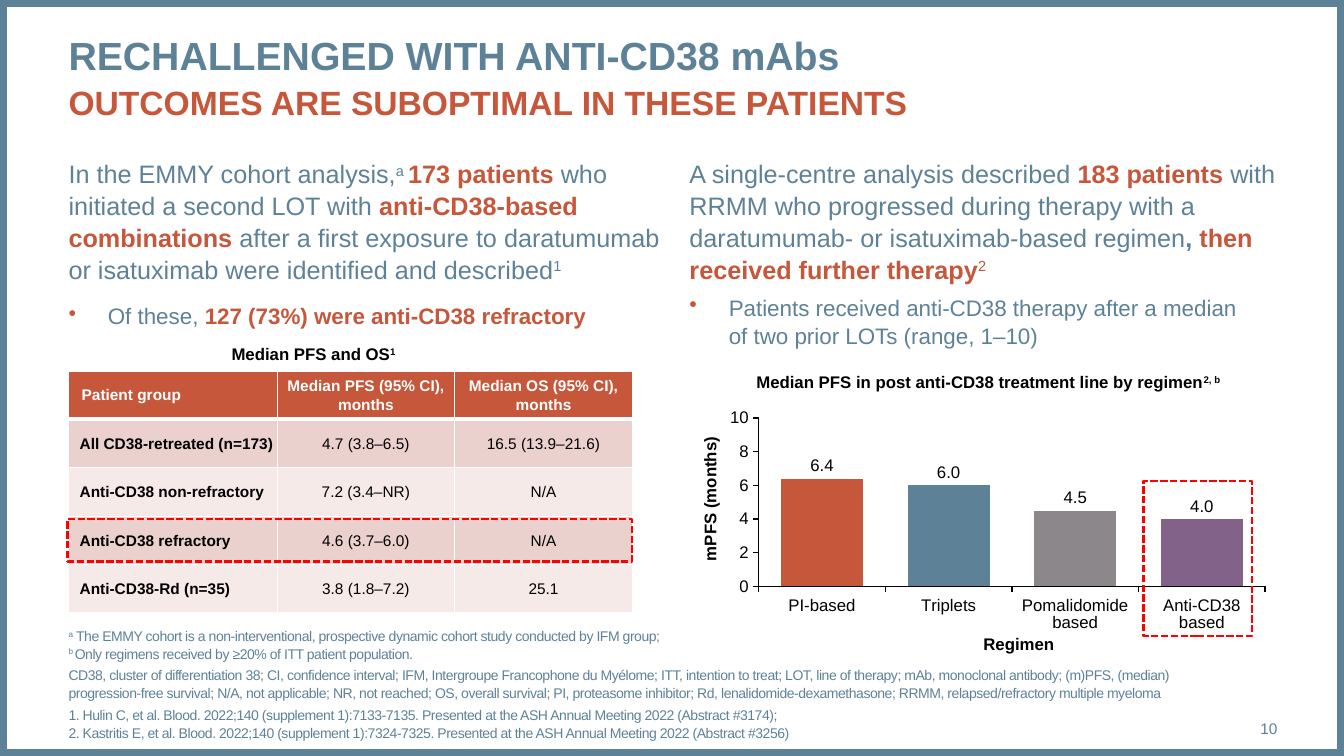
from lxml import etree
from pptx import Presentation
from pptx import util as u
from pptx.chart import data as chart_data
from pptx.dml import color
from pptx.enum import chart as charts, dml, shapes, text
from pptx.oxml import ns, parse_xml

BLUE, ORANGE, BLACK, WHITE, RED = "5D8298", "C6573B", "000000", "FFFFFF", "FF0000"
LEFT, RIGHT, CENTER = text.PP_ALIGN.LEFT, text.PP_ALIGN.RIGHT, text.PP_ALIGN.CENTER
TOP, MIDDLE, BOTTOM = text.MSO_ANCHOR.TOP, text.MSO_ANCHOR.MIDDLE, text.MSO_ANCHOR.BOTTOM


def rgb(value):
    return color.RGBColor.from_string(value)


class Slide:
    """Draws styled elements, placed in hundredths of the slide's width and height."""

    font = "Arial"

    def __init__(self, deck):
        self.deck = deck
        self.page = deck.slides.add_slide(deck.slide_layouts[6])

    def place(self, left, top, width, height):
        column, row = self.deck.slide_width / 100, self.deck.slide_height / 100
        return [round(n) for n in (left * column, top * row, width * column, height * row)]

    def style(self, font, size, tone, bold=False):
        font.name, font.size, font.bold = self.font, u.Pt(size), bold
        font.color.rgb = rgb(tone)

    def spans(self, para, spans, size, tone, spacing=0):
        for words, marks in spans:
            for number, line in enumerate(words.split("\n")):
                if number:
                    para.add_line_break()
                if not line:
                    continue
                span = para.add_run()
                span.text = line
                self.style(span.font, size, ORANGE if "o" in marks else tone, "b" in marks)
                properties = span.font._element
                if "^" in marks:
                    properties.set("baseline", "30000")
                if spacing:
                    properties.set("spc", str(spacing))

    def bullet(self, para):
        properties = para._p.get_or_add_pPr()
        indent = u.Inches(0.39)
        properties.set("marL", str(indent))
        properties.set("indent", str(-indent))
        tint = etree.SubElement(properties, ns.qn("a:buClr"))
        etree.SubElement(tint, ns.qn("a:srgbClr")).set("val", ORANGE)
        etree.SubElement(properties, ns.qn("a:buChar")).set("char", "•")

    def text(self, spot, paras, size, tone=BLUE, align=LEFT, anchor=TOP, gap=0,
             leading=1.0, spacing=0, bullet_size=None, wrap=True, turn=0):
        box = self.page.shapes.add_textbox(*self.place(*spot))
        box.rotation = turn
        frame = box.text_frame
        frame.word_wrap, frame.vertical_anchor = wrap, anchor
        frame.margin_left = frame.margin_right = frame.margin_top = frame.margin_bottom = 0
        for number, spans in enumerate(paras):
            para = frame.add_paragraph() if number else frame.paragraphs[0]
            para.alignment, para.line_spacing = align, leading
            para_size = size
            if number:
                para.space_before = u.Pt(gap)
                if bullet_size:
                    self.bullet(para)
                    para_size = bullet_size
            self.spans(para, spans, para_size, tone, spacing)

    def outline(self, spot, tone, width, dash=None):
        box = self.page.shapes.add_shape(shapes.MSO_SHAPE.RECTANGLE, *self.place(*spot))
        box.shadow.inherit = False
        box.fill.background()
        box.line.color.rgb, box.line.width = rgb(tone), u.Pt(width)
        if dash:
            box.line.dash_style = dash

    def borders(self, cell, row):
        properties = cell._tc.get_or_add_tcPr()
        for side in "LRTB":
            heavy = (row, side) in ((0, "B"), (1, "T"))
            line = etree.SubElement(properties, ns.qn(f"a:ln{side}"))
            line.set("w", str(u.Pt(3 if heavy else 1)))
            fill = etree.SubElement(line, ns.qn("a:solidFill"))
            etree.SubElement(fill, ns.qn("a:srgbClr")).set("val", WHITE)

    def table(self, spot, rows, shares):
        left, top, width, height = self.place(*spot)
        table = self.page.shapes.add_table(len(rows), len(shares), left, top, width, height).table
        table.horz_banding = False
        for column, share in zip(table.columns, shares):
            column.width = round(width * share)
        for r, row in enumerate(rows):
            table.rows[r].height = round(height / len(rows))
            for c, words in enumerate(row):
                cell = table.cell(r, c)
                self.borders(cell, r)
                cell.fill.solid()
                cell.fill.fore_color.rgb = rgb(("F5EAE8", "EAD1CE")[r % 2] if r else ORANGE)
                cell.vertical_anchor = MIDDLE
                side = 0.01 if r else 0.05 if c else 0.03
                cell.margin_left = u.Inches(side if c else side + 0.1)
                cell.margin_right = u.Inches(side)
                cell.margin_top, cell.margin_bottom = u.Inches(0.01 if r else 0), 0
                para = cell.text_frame.paragraphs[0]
                para.alignment = CENTER if c else LEFT
                if not r and c:
                    para.line_spacing = 1.07
                marks = "" if r and c else "b"
                self.spans(para, [(words, marks)], 11, BLACK if r else WHITE)

    def columns(self, spot, bars, plot):
        data = chart_data.CategoryChartData()
        data.categories = [name for name, _, _ in bars]
        data.add_series("Series 1", [value for _, value, _ in bars])
        kind = charts.XL_CHART_TYPE.COLUMN_CLUSTERED
        chart = self.page.shapes.add_chart(kind, *self.place(*spot), data).chart
        chart.has_legend = chart.has_title = False
        self.style(chart.font, 12, BLACK)
        for axis in (chart.category_axis, chart.value_axis):
            axis.has_major_gridlines = False
            axis.major_tick_mark = charts.XL_TICK_MARK.OUTSIDE
            axis.format.line.color.rgb, axis.format.line.width = rgb(BLACK), u.Pt(1)
            self.style(axis.tick_labels.font, 12, BLACK)
        axis.minimum_scale, axis.maximum_scale, axis.major_unit = 0, 10, 2
        group = chart.plots[0]
        group.gap_width, group.vary_by_categories = 54, False
        group.has_data_labels = True
        labels = group.data_labels
        labels.show_value, labels.position = True, charts.XL_LABEL_POSITION.OUTSIDE_END
        labels.number_format, labels.number_format_is_linked = "0.0", False
        self.style(labels.font, 12, BLACK)
        for number, (_, _, tone) in enumerate(bars):
            fill = group.series[0].points[number].format.fill
            fill.solid()
            fill.fore_color.rgb = rgb(tone)
        area = chart._chartSpace.chart.plotArea
        for layout in area.findall(ns.qn("c:layout")):
            area.remove(layout)
        sizes = "".join(f'<c:{key} val="{share}"/>' for key, share in zip("xywh", plot))
        area.insert(0, parse_xml(
            f'<c:layout {ns.nsdecls("c")}><c:manualLayout><c:layoutTarget val="inner"/>'
            f'<c:xMode val="edge"/><c:yMode val="edge"/>{sizes}</c:manualLayout></c:layout>'))


def main():
    deck = Presentation()
    deck.slide_width, deck.slide_height = u.Inches(13.33), u.Inches(7.5)
    slide = Slide(deck)
    margin, half = 5.1, 51.3
    slide.outline((0, 0, 100, 100), BLUE, 10)
    slide.text((margin, 3.73, 89.95, 12.5), [[
        ("RECHALLENGED WITH ANTI-CD38 mAbs\n", "b")]], 28, leading=1.07)
    slide.page.shapes[-1].text_frame.paragraphs[0].line_spacing = 1.07
    slide.spans(slide.page.shapes[-1].text_frame.paragraphs[0],
                [("OUTCOMES ARE SUBOPTIMAL IN THESE PATIENTS", "bo")], 24, BLUE)
    slide.text((88.6, 93.73, 6.45, 5.33), [[("10", "")]], 11, align=RIGHT, anchor=MIDDLE)
    slide.text((margin, 92.67, 84.47, 5.33), [
        [("a", "^"), (" The EMMY cohort is a non-interventional, prospective dynamic cohort study "
                      "conducted by IFM group;\n", ""),
         ("b ", "^"), ("Only regimens received by ≥20% of ITT patient population.", "")],
        [("CD38, cluster of differentiation 38; CI, confidence interval; IFM, Intergroupe "
          "Francophone du Myélome; ITT, intention to treat; LOT, line of therapy; mAb, monoclonal "
          "antibody; (m)PFS, (median) progression-free survival; N/A, not applicable; NR, not "
          "reached; OS, overall survival; PI, proteasome inhibitor; Rd, "
          "lenalidomide-dexamethasone; RRMM, relapsed/refractory multiple myeloma", "")],
        [("1. Hulin C, et al. Blood. 2022;140 (supplement 1):7133-7135. Presented at the ASH "
          "Annual Meeting 2022 (Abstract #3174);\n2. Kastritis E, et al. Blood. 2022;140 "
          "(supplement 1):7324-7325. Presented at the ASH Annual Meeting 2022 "
          "(Abstract #3256)", "")],
    ], 10, anchor=BOTTOM, gap=3, leading=1.05, spacing=-30)
    slide.text((margin, 20.8, 44.2, 66), [
        [("In the EMMY cohort analysis,", ""), ("a ", "^"), ("173 patients ", "bo"),
         ("who initiated a second LOT with ", ""), ("anti-CD38-based combinations", "bo"),
         (" after a first exposure to daratumumab or isatuximab were identified and described", ""),
         ("1", "^")],
        [("Of these, ", ""), ("127 (73%) were anti-CD38 refractory", "bo")],
    ], 18, gap=12, leading=1.05, bullet_size=16)
    slide.table((margin, 49.07, 41.95, 32), [
        ("Patient group", "Median PFS (95% CI), months", "Median OS (95% CI), months"),
        ("All CD38-retreated (n=173)", "4.7 (3.8–6.5)", "16.5 (13.9–21.6)"),
        ("Anti-CD38 non-refractory", "7.2 (3.4–NR)", "N/A"),
        ("Anti-CD38 refractory", "4.6 (3.7–6.0)", "N/A"),
        ("Anti-CD38-Rd (n=35)", "3.8 (1.8–7.2)", "25.1"),
    ], (0.37, 0.315, 0.315))
    slide.text((55.14, 49.2, 36.8, 2.67), [[
        ("Median PFS in post anti-CD38 treatment line by regimen", "b"), ("2, b", "b^")]],
        12, BLACK, CENTER)
    slide.text((margin, 45.47, 36.46, 2.67), [[("Median PFS and OS", "b"), ("1", "b^")]],
               12, BLACK, CENTER)
    slide.text((half, 20.8, 44.2, 26), [
        [("A single-centre analysis described ", ""), ("183 patients ", "bo"),
         ("with RRMM who progressed during therapy with a daratumumab- or isatuximab-based "
          "regimen", ""), (", ", "b"), ("then received further therapy", "bo"), ("2", "o^")],
        [("Patients received anti-CD38 therapy after a median\n"
          "of two prior LOTs (range, 1–10)", "")],
    ], 18, gap=6, leading=1.05, bullet_size=16)
    slide.columns((53.56, 53.47, 41.41, 30.53), [
        ("PI-based", 6.4, ORANGE), ("Triplets", 6, BLUE),
        ("Pomalidomide based", 4.5, "8B878B"), ("Anti-CD38 based", 4, "826288"),
    ], (0.07, 0.06, 0.91, 0.73))
    slide.text((73.14, 83.87, 5.33, 2.67), [[("Regimen", "b")]], 12, BLACK, CENTER, wrap=False)
    slide.text((48.16, 64.67, 9.3, 2.67), [[("mPFS (months)", "b")]], 12, BLACK, CENTER,
               wrap=False, turn=270)
    for spot in ((85.07, 63.6, 8.1, 20.53), (5.03, 68.67, 42.01, 5.6)):
        slide.outline(spot, RED, 1.75, dml.MSO_LINE.SQUARE_DOT)
    deck.save("out.pptx")


if __name__ == "__main__":
    main()
